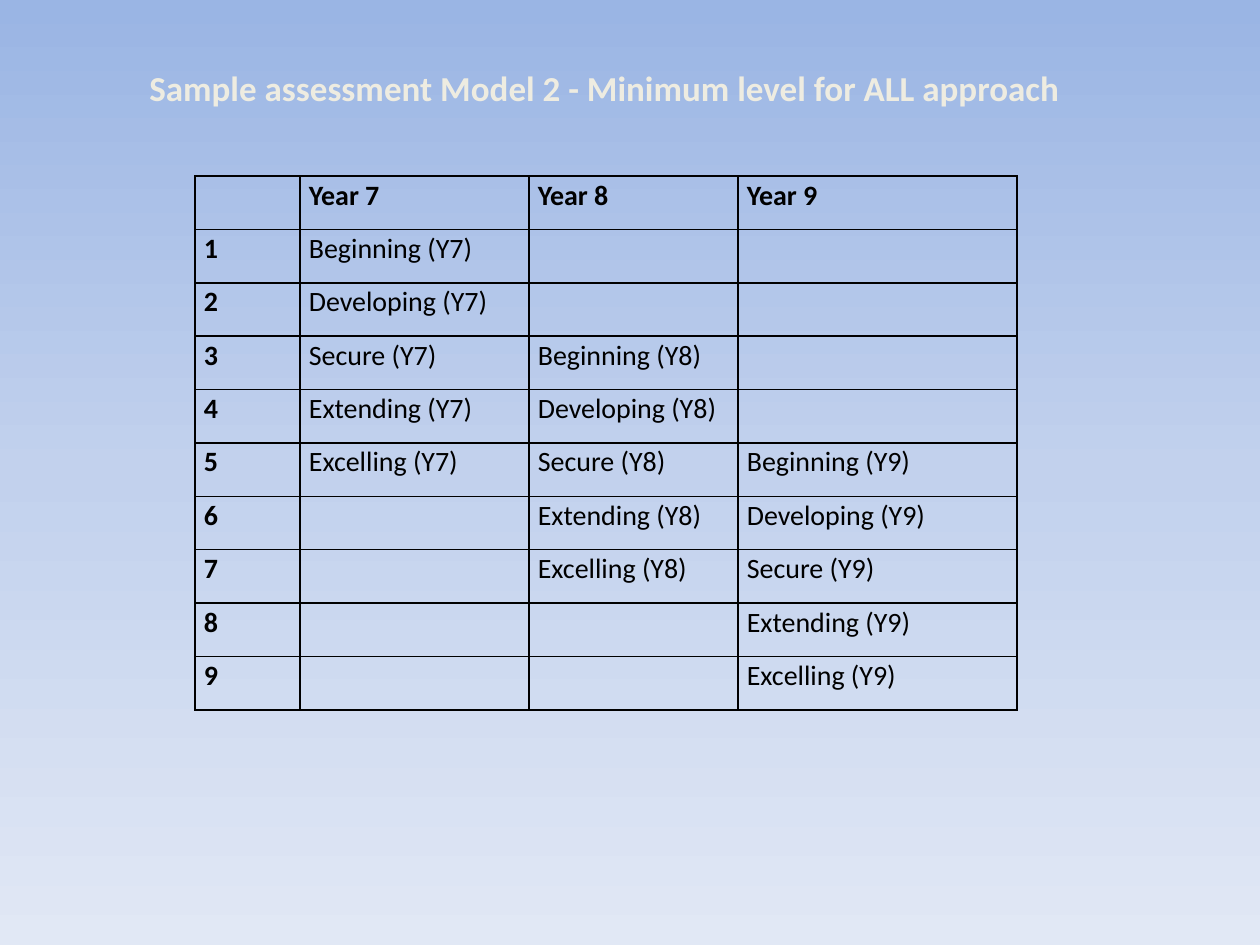
from lxml.etree import SubElement
from pptx import Presentation
from pptx.dml.color import RGBColor as RGB
from pptx.enum.text import PP_ALIGN as AL
from pptx.oxml.ns import qn
from pptx.util import Pt

PX = 914400 / 126
FONT = "Calibri"
C = {"top": "9AB5E4", "mid": "C2D1ED", "low": "E1E8F5", "title": "EEECE1", "ink": "000000"}
LEVELS = ["Beginning", "Developing", "Secure", "Extending", "Excelling"]
YEARS = [7, 8, 9]
COLS = [105, 229, 209, 279]
GRADES = 9
STEP = 2


def emu(px):
    """Turn pixels into EMU."""
    return round(px * PX)


def put_text(tf, text, size=16, color="ink", bold=False, align=AL.LEFT, spacing=None):
    """Write one formatted paragraph into a text frame."""
    p = tf.paragraphs[0]
    p.alignment = align
    p.line_spacing = spacing
    p.font.size = Pt(size)
    r = p.add_run()
    r.text = text
    r.font.name, r.font.size, r.font.bold = FONT, Pt(size), bold
    r.font.color.rgb = RGB.from_string(C[color])


def paint_background(s):
    """Fill the slide with a vertical three-stop gradient."""
    fill = s.background.fill
    fill.gradient()
    grad = s.background._cSld.find(".//" + qn("a:gradFill"))
    stops = grad.find(qn("a:gsLst"))
    for gs in list(stops):
        stops.remove(gs)
    for pos, name in ((0, "top"), (50, "mid"), (100, "low")):
        gs = SubElement(stops, qn("a:gs"), pos=str(pos * 1000))
        SubElement(gs, qn("a:srgbClr"), val=C[name])
    fill.gradient_angle = 270


def add_title(s, x, y, w, h):
    """Place the centred slide title."""
    tf = s.shapes.add_textbox(emu(x), emu(y), emu(w), emu(h)).text_frame
    tf.word_wrap = True
    tf.margin_left = tf.margin_right = tf.margin_top = tf.margin_bottom = emu(13)
    put_text(tf, "Sample assessment Model 2 - Minimum level for ALL approach",
             size=20, color="title", bold=True, align=AL.CENTER)


def style_cell(cell):
    """Give a cell no fill, thin black borders and narrow margins."""
    cell.margin_left = cell.margin_right = emu(9)
    cell.margin_top = cell.margin_bottom = 0
    pr = cell._tc.get_or_add_tcPr()
    for side in ("lnL", "lnR", "lnT", "lnB"):
        ln = SubElement(pr, qn("a:" + side), w=str(Pt(1)))
        SubElement(SubElement(ln, qn("a:solidFill")), qn("a:srgbClr"), val=C["ink"])
    cell.fill.background()


def cell_text(row, col):
    """Return the wording of a cell; each year starts STEP grades higher."""
    if row == 0:
        return f"Year {YEARS[col - 1]}" if col else ""
    if col == 0:
        return str(row)
    level = row - 1 - STEP * (col - 1)
    return f"{LEVELS[level]} (Y{YEARS[col - 1]})" if 0 <= level < len(LEVELS) else ""


def add_level_table(s, x, y, w, h):
    """Place the grid of levels by grade and year."""
    rows = GRADES + 1
    table = s.shapes.add_table(rows, len(COLS), emu(x), emu(y), emu(w), emu(h)).table
    table.first_row = table.horz_banding = False
    for col, share in zip(table.columns, COLS):
        col.width = emu(w * share / sum(COLS))
    for i, row in enumerate(table.rows):
        row.height = emu(h / rows)
        for j, cell in enumerate(row.cells):
            style_cell(cell)
            text = cell_text(i, j)
            if text:
                put_text(cell.text_frame, text, bold=i == 0 or j == 0, spacing=1.07)


def main():
    """Build and save the slide."""
    prs = Presentation()
    prs.slide_width, prs.slide_height = emu(1260), emu(945)
    s = prs.slides.add_slide(prs.slide_layouts[6])
    paint_background(s)
    add_level_table(s, 195, 176, 822, 534)
    add_title(s, 54, 54, 1101, 62)
    prs.save("out.pptx")


if __name__ == "__main__":
    main()
